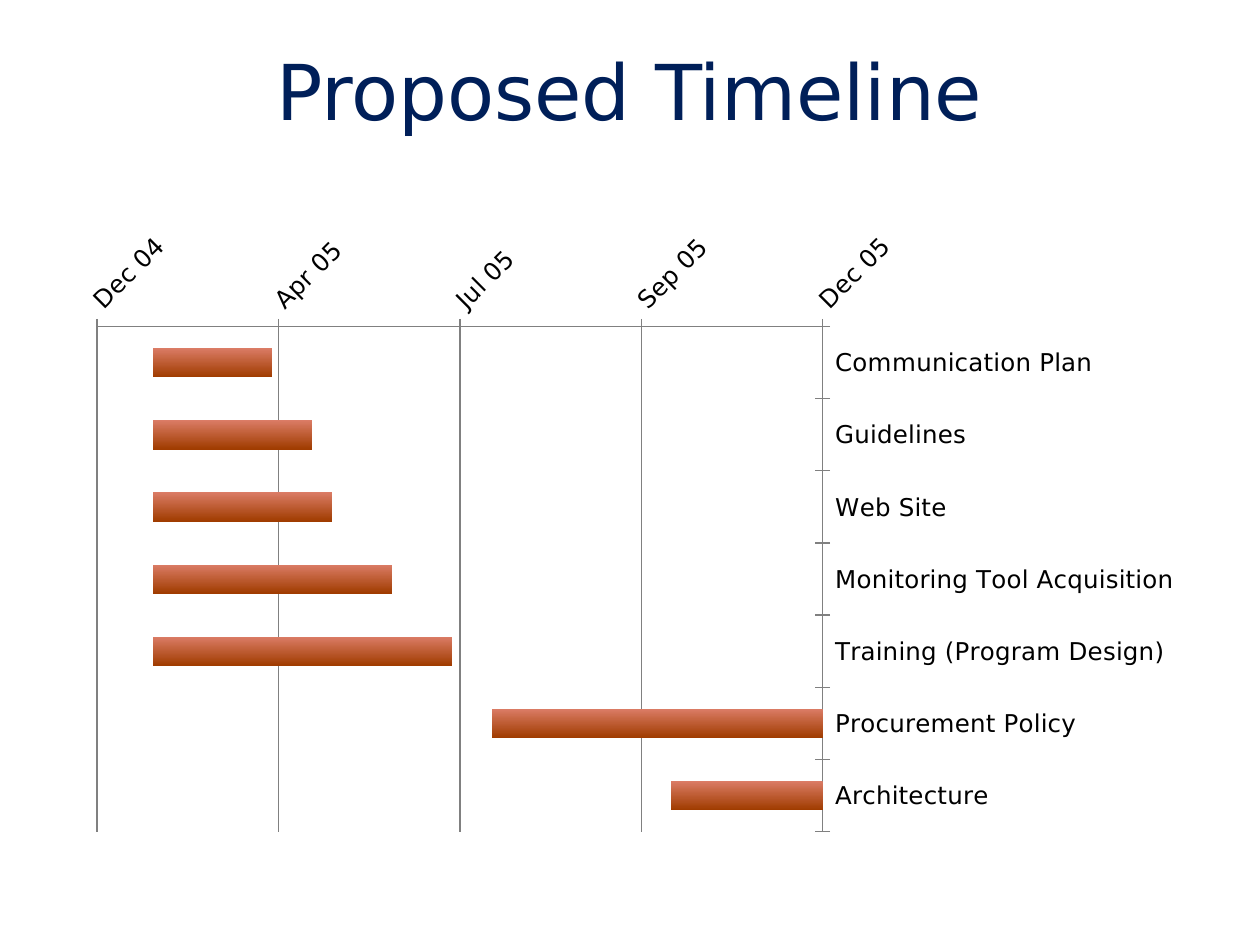
from dataclasses import dataclass

from lxml import etree
from pptx import Presentation
from pptx import util as u
from pptx.chart.data import CategoryChartData
from pptx.dml.color import RGBColor
from pptx.enum import chart as ch, text
from pptx.oxml import parse_xml
from pptx.oxml.ns import nsdecls, qn


@dataclass(frozen=True)
class Theme:
    font: str = "DejaVu Sans"
    title: str = "001F59"
    ink: str = "000000"
    line: str = "808080"
    bar_top: str = "DB7C66"
    bar_bottom: str = "A03C00"
    title_size: int = 44
    label_size: int = 14


@dataclass(frozen=True)
class Task:
    name: str
    start: int
    days: int


THEME = Theme()
TASKS = [
    Task("Communication Plan", 38380, 60),
    Task("Guidelines", 38380, 80),
    Task("Web Site", 38380, 90),
    Task("Monitoring Tool Acquisition", 38380, 120),
    Task("Training (Program Design)", 38380, 150),
    Task("Procurement Policy", 38550, 170),
    Task("Architecture", 38640, 80),
]
AXIS_START, AXIS_END, AXIS_STEP = 38352, 38716, 91
PLOT = {"x": 0.03, "y": 0.17, "w": 0.64, "h": 0.81}


def format_font(font, *, size: int, color: str) -> None:
    font.name = THEME.font
    font.size = u.Pt(size)
    font.color.rgb = RGBColor.from_string(color)


def add_text(s, content: str, *, left: float, top: float, width: float,
             height: float, size: int, color: str, align) -> None:
    tf = s.shapes.add_textbox(u.Inches(left), u.Inches(top),
                              u.Inches(width), u.Inches(height)).text_frame
    tf.word_wrap = True
    tf.vertical_anchor = text.MSO_ANCHOR.TOP
    p = tf.paragraphs[0]
    p.alignment = align
    r = p.add_run()
    r.text = content
    format_font(r.font, size=size, color=color)


def format_line(line) -> None:
    line.color.rgb = RGBColor.from_string(THEME.line)
    line.width = u.Pt(0.75)


def format_axis(axis) -> None:
    axis.major_tick_mark = ch.XL_TICK_MARK.CROSS
    axis.minor_tick_mark = ch.XL_TICK_MARK.NONE
    format_font(axis.tick_labels.font, size=THEME.label_size, color=THEME.ink)
    format_line(axis.format.line)


def set_plot_layout(chart) -> None:
    layout = parse_xml(f'<c:layout {nsdecls("c")}><c:manualLayout/></c:layout>')
    manual = layout[0]
    settings = {"layoutTarget": "inner", "xMode": "edge", "yMode": "edge", **PLOT}
    for tag, value in settings.items():
        etree.SubElement(manual, qn(f"c:{tag}")).set("val", str(value))
    area = chart.element.find(".//" + qn("c:plotArea"))
    for old in area.findall(qn("c:layout")):
        area.remove(old)
    area.insert(0, layout)


def add_timeline(s, tasks: list[Task]) -> None:
    data = CategoryChartData()
    data.categories = [task.name for task in tasks]
    data.add_series("Series 1", [task.start for task in tasks])
    data.add_series("Series 2", [task.days for task in tasks])
    chart = s.shapes.add_chart(ch.XL_CHART_TYPE.BAR_STACKED, u.Inches(0.5),
                               u.Inches(1.75), u.Inches(9), u.Inches(4.95), data).chart
    chart.has_legend = False
    chart.has_title = False
    format_font(chart.font, size=THEME.label_size, color=THEME.ink)

    plot = chart.plots[0]
    plot.gap_width = 150
    plot.overlap = 100
    plot.vary_by_categories = False
    offset, bars = plot.series
    offset.format.fill.background()
    offset.format.line.fill.background()
    bars.format.line.fill.background()
    fill = bars.format.fill
    fill.gradient()
    fill.gradient_angle = 270
    for stop, color in zip(fill.gradient_stops, (THEME.bar_top, THEME.bar_bottom)):
        stop.color.rgb = RGBColor.from_string(color)

    names, dates = chart.category_axis, chart.value_axis
    for axis in (names, dates):
        format_axis(axis)
    names.reverse_order = True
    names.has_major_gridlines = False
    dates.minimum_scale = AXIS_START
    dates.maximum_scale = AXIS_END
    dates.major_unit = AXIS_STEP
    dates.crosses = ch.XL_AXIS_CROSSES.MAXIMUM
    dates.has_major_gridlines = True
    format_line(dates.major_gridlines.format.line)
    dates.tick_labels.number_format = "mmm\\ yy"
    dates.tick_labels.number_format_is_linked = False
    body = chart.element.find(".//" + qn("c:valAx")).find(
        qn("c:txPr") + "/" + qn("a:bodyPr"))
    body.set("rot", str(-45 * 60000))
    body.set("vert", "horz")
    set_plot_layout(chart)


def main() -> None:
    prs = Presentation()
    prs.slide_width, prs.slide_height = u.Inches(10), u.Inches(7.5)
    s = prs.slides.add_slide(prs.slide_layouts[6])
    add_text(s, "Proposed Timeline", left=0.5, top=0.3, width=9, height=1.25,
             size=THEME.title_size, color=THEME.title, align=text.PP_ALIGN.CENTER)
    add_timeline(s, TASKS)
    prs.save("out.pptx")


if __name__ == "__main__":
    main()
